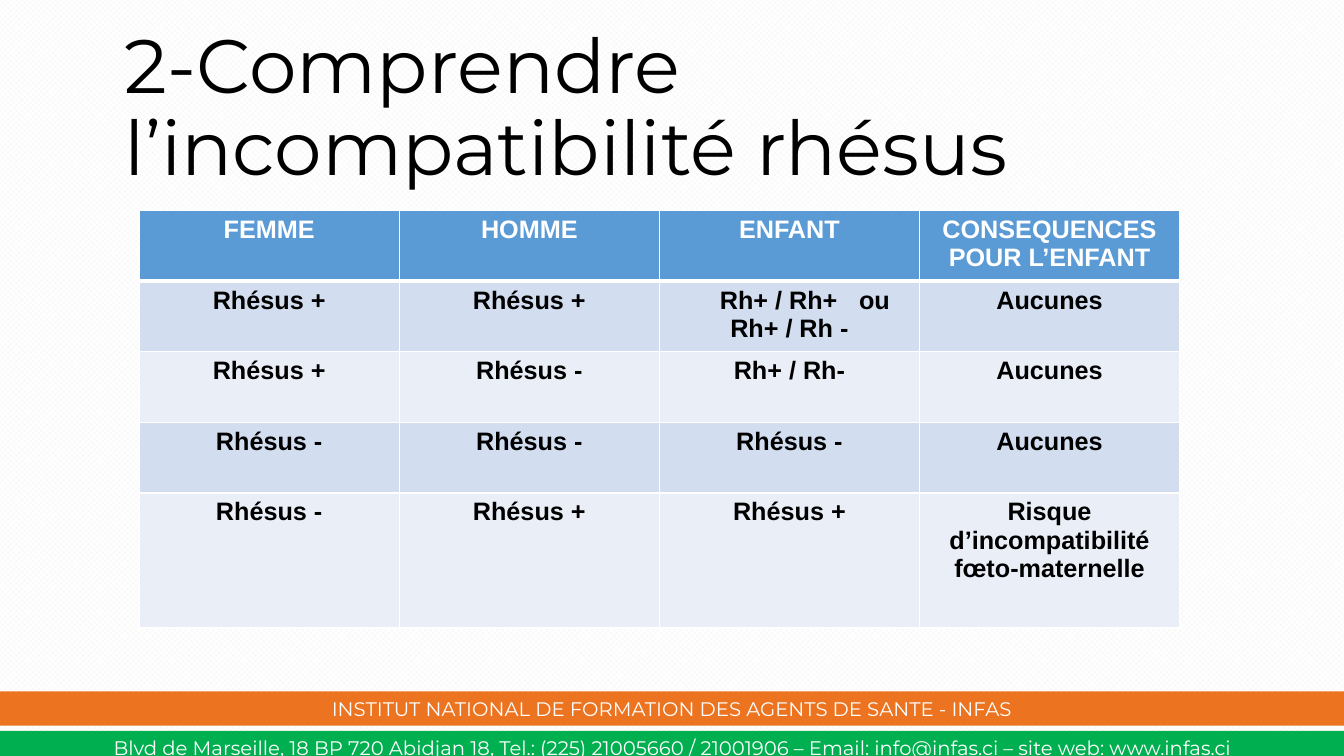
from lxml import etree
from pptx import Presentation
from pptx import util as u
from pptx.dml.color import RGBColor
from pptx.enum import dml, shapes, text
from pptx.oxml.ns import qn

COLORS = {
    "white": "FFFFFF",
    "black": "000000",
    "pattern": "F2F2F2",
    "green": "00B050",
    "orange": "EC7320",
    "header": "5B9BD5",
    "band_dark": "D2DEEF",
    "band_light": "EAEFF7",
}
TITLE = "2-Comprendre l’incompatibilité rhésus"
INSTITUTE = "INSTITUT NATIONAL DE FORMATION DES AGENTS DE SANTE - INFAS"
CONTACT = ("Blvd de Marseille, 18 BP 720 Abidjan 18, Tel.: (225) 21005660 / 21001906"
           " – Email: info@infas.ci – site web: www.infas.ci")
ROWS = [
    ["FEMME", "HOMME", "ENFANT", "CONSEQUENCES POUR L’ENFANT"],
    ["Rhésus +", "Rhésus +", "Rh+ / Rh+\tou\nRh+ / Rh -", "Aucunes"],
    ["Rhésus +", "Rhésus -", "Rh+ / Rh-", "Aucunes"],
    ["Rhésus -", "Rhésus -", "Rhésus -", "Aucunes"],
    ["Rhésus -", "Rhésus +", "Rhésus +", "Risque d’incompatibilité fœto-maternelle"],
]
ROW_HEIGHTS = [0.7, 0.7, 0.7, 0.7, 1.34]


def rgb(name):
    return RGBColor.from_string(COLORS[name])


def add_run(p, content, size, font, color, bold=False):
    r = p.add_run()
    r.text = content
    r.font.size = u.Pt(size)
    r.font.name = font
    r.font.bold = bold
    r.font.color.rgb = rgb(color)


def add_background(s):
    fill = s.background.fill
    fill.patterned()
    fill.pattern = dml.MSO_PATTERN.SOLID_DIAMOND
    fill.fore_color.rgb = rgb("pattern")
    fill.back_color.rgb = rgb("white")


def add_band(s, box, content, color, anchor):
    sp = s.shapes.add_shape(shapes.MSO_SHAPE.RECTANGLE, *map(u.Inches, box))
    sp.shadow.inherit = False
    sp.fill.solid()
    sp.fill.fore_color.rgb = rgb(color)
    sp.line.fill.background()
    tf = sp.text_frame
    tf.word_wrap = True
    tf.margin_top = tf.margin_bottom = 0
    tf.vertical_anchor = anchor
    p = tf.paragraphs[0]
    p.alignment = text.PP_ALIGN.CENTER
    add_run(p, content, 14, "Montserrat", "white")


def add_title(s, box):
    tf = s.shapes.add_textbox(*map(u.Inches, box)).text_frame
    tf.word_wrap = True
    tf.vertical_anchor = text.MSO_ANCHOR.BOTTOM
    p = tf.paragraphs[0]
    p.line_spacing = 0.9
    add_run(p, TITLE, 54, "Montserrat", "black")


def set_borders(cell, bottom_width):
    tc_pr = cell._tc.get_or_add_tcPr()
    widths = {"lnL": 1, "lnR": 1, "lnT": 1, "lnB": bottom_width}
    for i, (tag, width) in enumerate(widths.items()):
        ln = etree.Element(qn("a:" + tag), w=str(u.Pt(width)))
        fill = etree.SubElement(ln, qn("a:solidFill"))
        etree.SubElement(fill, qn("a:srgbClr"), val=COLORS["white"])
        tc_pr.insert(i, ln)


def set_tab(p, indent, stop):
    p_pr = p._p.get_or_add_pPr()
    p_pr.set("marL", "0")
    p_pr.set("indent", str(u.Inches(indent)))
    tabs = etree.SubElement(p_pr, qn("a:tabLst"))
    etree.SubElement(tabs, qn("a:tab"), pos=str(u.Inches(stop)), algn="l")


def fill_cell(cell, content, fill, color):
    cell.fill.solid()
    cell.fill.fore_color.rgb = rgb(fill)
    tf = cell.text_frame
    for i, line in enumerate(content.split("\n")):
        p = tf.add_paragraph() if i else tf.paragraphs[0]
        if "\t" in line:
            set_tab(p, 0.5, 2.05)
            p.alignment = text.PP_ALIGN.LEFT
        else:
            p.alignment = text.PP_ALIGN.CENTER
        add_run(p, line, 18, "Arial", color, True)


def add_rhesus_table(s, box):
    frame = s.shapes.add_table(len(ROWS), len(ROWS[0]), *map(u.Inches, box))
    table = frame.table
    for col in table.columns:
        col.width = u.Inches(box[2] / len(ROWS[0]))
    for i, (row, height) in enumerate(zip(ROWS, ROW_HEIGHTS)):
        table.rows[i].height = u.Inches(height)
        if i == 0:
            fill, color = "header", "white"
        else:
            fill, color = ("band_dark" if i % 2 else "band_light"), "black"
        for j, content in enumerate(row):
            cell = table.cell(i, j)
            fill_cell(cell, content, fill, color)
            set_borders(cell, 1 if i else 3)


def main():
    prs = Presentation()
    prs.slide_width = u.Inches(13.33)
    prs.slide_height = u.Inches(7.5)
    s = prs.slides.add_slide(prs.slide_layouts[6])
    add_background(s)
    add_band(s, (0, 7.25, 13.35, 0.28), CONTACT, "green", text.MSO_ANCHOR.BOTTOM)
    add_band(s, (0, 6.86, 13.33, 0.34), INSTITUTE, "orange", text.MSO_ANCHOR.MIDDLE)
    add_title(s, (1.14, 0.28, 10.97, 1.67))
    add_rhesus_table(s, (1.38, 2.09, 10.32, sum(ROW_HEIGHTS)))
    prs.save("out.pptx")


if __name__ == "__main__":
    main()
